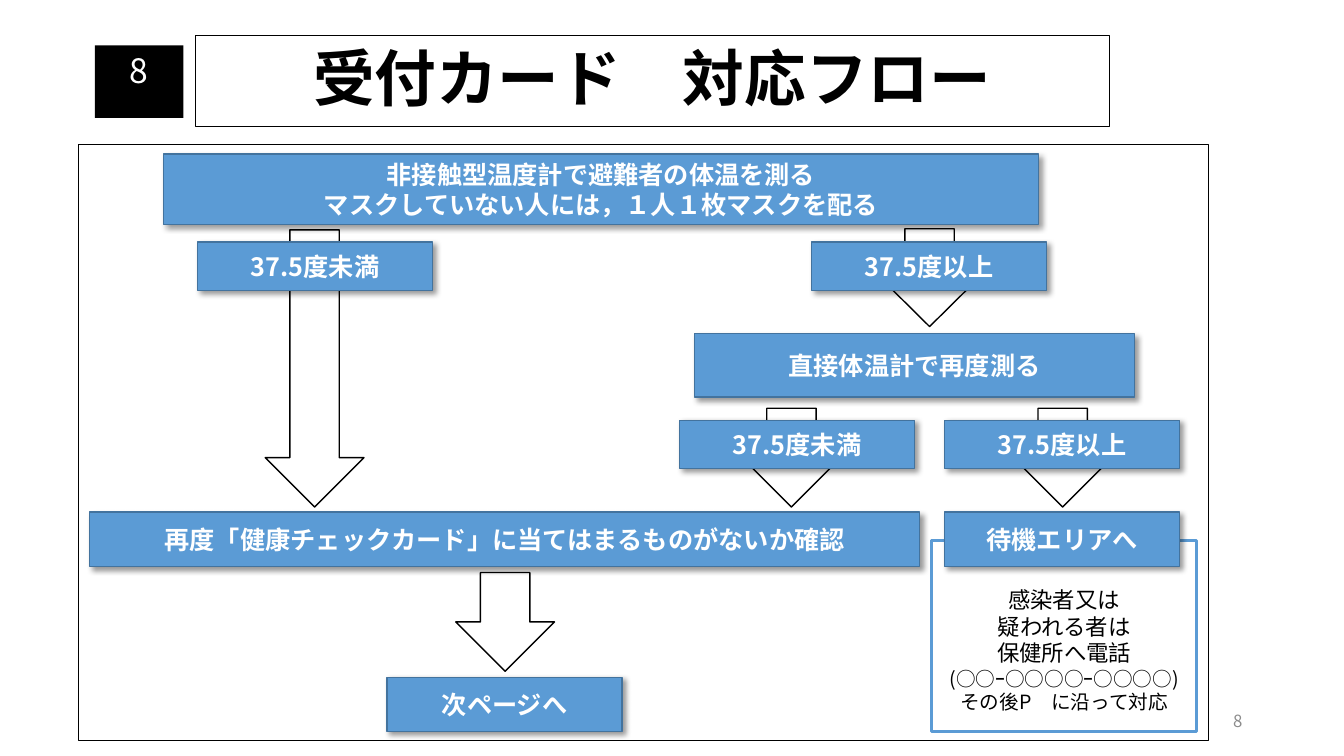
from dataclasses import dataclass

from lxml import etree
from pptx import Presentation
from pptx.dml.color import RGBColor
from pptx.enum import shapes, text
from pptx.oxml import ns
from pptx.util import Emu, Pt

EMU_PER_PX = 9144  # 100 px to the inch
SANS, SERIF = "Noto Sans CJK JP", "TeX Gyre Schola"
BLACK, WHITE, BLUE, DARK_BLUE, GRAY = "000000", "FFFFFF", "5B9BD5", "43739E", "8C8C8C"
RECTANGLE = shapes.MSO_SHAPE.RECTANGLE
DOWN_ARROW = shapes.MSO_SHAPE.DOWN_ARROW


@dataclass(frozen=True)
class Box:
    left: int
    top: int
    width: int
    height: int

    def emu(self) -> list[Emu]:
        return [px(n) for n in (self.left, self.top, self.width, self.height)]


@dataclass(frozen=True)
class Run:
    words: str
    size: int = 18
    font: str = SERIF
    color: str = WHITE
    bold: bool = True


@dataclass(frozen=True)
class Step:
    box: Box
    lines: list[list[Run]]


def px(length: int) -> Emu:
    return Emu(length * EMU_PER_PX)


def rgb(color: str) -> RGBColor:
    return RGBColor.from_string(color)


def write(shape, lines: list[list[Run]], anchor=text.MSO_ANCHOR.MIDDLE,
          align=text.PP_ALIGN.CENTER) -> None:
    frame = shape.text_frame
    frame.word_wrap = True
    frame.vertical_anchor = anchor
    for index, line in enumerate(lines):
        paragraph = frame.paragraphs[0] if index == 0 else frame.add_paragraph()
        paragraph.alignment = align
        for item in line:
            run = paragraph.add_run()
            run.text = item.words
            font = run.font
            font.size, font.bold, font.name = Pt(item.size), item.bold, item.font
            font.color.rgb = rgb(item.color)
            east_asian = etree.SubElement(font._element, ns.qn("a:ea"))
            east_asian.set("typeface", item.font)


def outline(shape, color: str, width: float) -> None:
    shape.line.color.rgb = rgb(color)
    shape.line.width = Pt(width)


def add_block(slide, box: Box, fill: str, line: str, width: float, kind=RECTANGLE):
    shape = slide.shapes.add_shape(kind, *box.emu())
    shape.shadow.inherit = False
    shape.fill.solid()
    shape.fill.fore_color.rgb = rgb(fill)
    outline(shape, line, width)
    return shape


def cast_shadow(shape) -> None:
    effects = shape._element.spPr.find(ns.qn("a:effectLst"))
    shadow = etree.SubElement(effects, ns.qn("a:outerShdw"), blurRad=str(Pt(4)),
                              dist=str(Pt(3)), dir="2700000", algn="tl", rotWithShape="0")
    color = etree.SubElement(shadow, ns.qn("a:srgbClr"), val=BLACK)
    etree.SubElement(color, ns.qn("a:alpha"), val="40000")


def add_step(slide, step: Step) -> None:
    shape = add_block(slide, step.box, BLUE, DARK_BLUE, 1)
    cast_shadow(shape)
    write(shape, step.lines)


def threshold(left: int, top: int, side: str) -> Step:
    """A branch label such as 37.5 degrees or more."""
    return Step(Box(left, top, 233, 48), [[Run("37.5", font=SANS), Run(side)]])


ARROWS = [
    Box(263, 228, 98, 275),
    Box(873, 227, 98, 97),
    Box(736, 405, 98, 98),
    Box(1005, 405, 98, 98),
    Box(452, 568, 98, 98),
]
STEPS = [
    Step(Box(162, 153, 868, 70), [[Run("非接触型温度計で避難者の体温を測る")],
                                  [Run("マスクしていない人には，１人１枚マスクを配る")]]),
    threshold(196, 240, "度未満"),
    threshold(805, 240, "度以上"),
    Step(Box(689, 331, 436, 63), [[Run("直接体温計で再度測る")]]),
    threshold(674, 417, "度未満"),
    threshold(937, 417, "度以上"),
    Step(Box(89, 508, 823, 54), [[Run("再度「健康チェックカード」に当てはまるものがないか確認")]]),
    Step(Box(937, 508, 233, 54), [[Run("待機エリアへ")]]),
    Step(Box(384, 672, 233, 54), [[Run("次ページへ", font=SANS)]]),
]
WAITING_NOTE = [("感染者又は", 16), ("疑われる者は", 16), ("保健所へ電話", 16),
                ("(○○ｰ○○○○ｰ○○○○)", 14), ("その後P　に沿って対応", 14)]


def add_title(slide) -> None:
    title = slide.shapes.title
    title.left, title.top, title.width, title.height = Box(194, 35, 906, 91).emu()
    outline(title, BLACK, 0.75)
    write(title, [[Run("受付カード　対応フロー", 44, SANS, BLACK)]])
    title.text_frame.paragraphs[0].line_spacing = 0.9


def add_waiting_note(slide) -> None:
    note = add_block(slide, Box(924, 536, 263, 190), WHITE, BLUE, 2.25)
    write(note, [[Run(words, size, SANS, BLACK, False)] for words, size in WAITING_NOTE])
    note.text_frame.margin_top = px(32)


def main() -> None:
    presentation = Presentation()
    presentation.slide_width, presentation.slide_height = px(1333), px(750)
    slide = presentation.slides.add_slide(presentation.slide_layouts[5])
    add_block(slide, Box(78, 143, 1121, 592), WHITE, BLACK, 0.75)

    page_number = slide.shapes.add_textbox(*Box(942, 695, 300, 40).emu())
    write(page_number, [[Run("8", 12, SANS, GRAY, False)]], align=text.PP_ALIGN.RIGHT)

    add_title(slide)
    badge = add_block(slide, Box(94, 45, 88, 72), BLACK, BLACK, 0.75)
    badge.line.fill.background()
    write(badge, [[Run("8", 24, SANS, WHITE, False)]], text.MSO_ANCHOR.TOP)

    add_waiting_note(slide)
    for arrow in ARROWS:
        add_block(slide, arrow, WHITE, BLACK, 1, DOWN_ARROW)
    for step in STEPS:
        add_step(slide, step)
    presentation.save("out.pptx")


if __name__ == "__main__":
    main()
